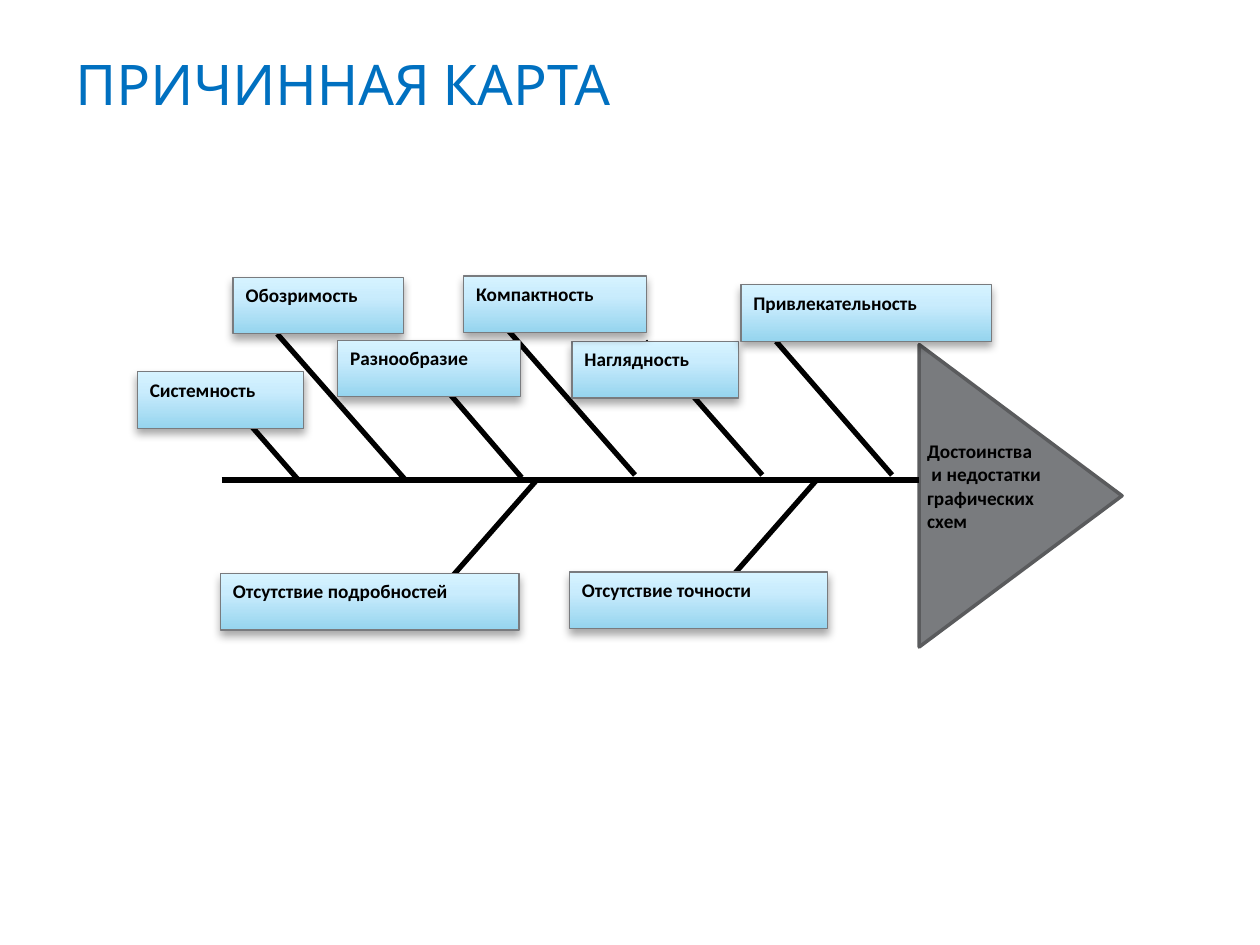
from copy import deepcopy

from lxml import etree
from pptx import Presentation
from pptx.dml.color import RGBColor
from pptx.enum.shapes import MSO_CONNECTOR, MSO_SHAPE
from pptx.enum.text import MSO_ANCHOR, PP_ALIGN
from pptx.oxml.ns import qn
from pptx.util import Emu, Pt

PX = 9144
RECT = MSO_SHAPE.RECTANGLE
TRIANGLE = MSO_SHAPE.ISOSCELES_TRIANGLE
STRAIGHT = MSO_CONNECTOR.STRAIGHT
LEFT = PP_ALIGN.LEFT
TOP = MSO_ANCHOR.TOP
MIDDLE = MSO_ANCHOR.MIDDLE

SPINE_Y = 381
BOX_HEIGHT = 45
BONES = [
    (616, 271, 708, 377),
    (512, 271, 605, 377),
    (404, 263, 504, 377),
    (322, 272, 414, 379),
    (426, SPINE_Y, 333, 487),
    (649, 380, 556, 486),
    (321, 380, 220, 265),
    (236, 380, 188, 325),
]
CAUSES = [
    ("Наглядность", 454, 271, 132),
    ("Компактность", 368, 219, 145),
    ("Обозримость", 185, 220, 135),
    ("Разнообразие", 268, 270, 145),
    ("Привлекательность", 588, 226, 199),
    ("Отсутствие точности", 452, 454, 205),
    ("Отсутствие подробностей", 175, 455, 237),
    ("Системность", 109, 295, 132),
]


def px(*values):
    return [Emu(v * PX) for v in values]


def rgb(value):
    return RGBColor.from_string(value)


class FishboneSlide:
    font = "Calibri"
    black = "000000"
    edge = "797B7E"
    gradient = [(0, "95D4EE"), (0.65, "C9ECFD"), (1, "D6F3FF")]

    def __init__(self, prs):
        self.slide = prs.slides.add_slide(prs.slide_layouts[6])

    def set_text(self, tf, text, size=11, font=font, color=black, bold=True, anchor=TOP, after=10):
        tf.word_wrap = True
        tf.vertical_anchor = anchor
        p = tf.paragraphs[0]
        p.text = text
        p.alignment = LEFT
        p.space_after = Pt(after)
        p.font.size = Pt(size)
        p.font.name = font
        p.font.bold = bold
        p.font.color.rgb = rgb(color)

    def text(self, text, x, y, w, h, **style):
        s = self.slide.shapes.add_textbox(*px(x, y, w, h))
        self.set_text(s.text_frame, text, **style)

    def shape(self, kind, x, y, w, h, line, width):
        s = self.slide.shapes.add_shape(kind, *px(x, y, w, h))
        s.shadow.inherit = False
        s.line.color.rgb = rgb(line)
        s.line.width = Pt(width)
        return s

    def head(self, x, y, w, h):
        s = self.shape(TRIANGLE, x, y, w, h, "5A5B5D", 2)
        s.rotation = 90
        s.fill.solid()
        s.fill.fore_color.rgb = rgb(self.edge)

    def line(self, x1, y1, x2, y2):
        s = self.slide.shapes.add_connector(STRAIGHT, *px(x1, y1, x2, y2))
        s.line.color.rgb = rgb(self.black)
        s.line.width = Pt(3)
        etree.SubElement(s._element.spPr, qn("a:effectLst"))

    def box(self, text, x, y, w):
        s = self.shape(RECT, x, y, w, BOX_HEIGHT, self.edge, 0.75)
        s.fill.gradient()
        s.fill.gradient_angle = 90
        stops = s._element.spPr.find(".//" + qn("a:gsLst"))
        stops.append(deepcopy(stops[0]))
        for stop, (position, color) in zip(s.fill.gradient_stops, self.gradient):
            stop.position = position
            stop.color.rgb = rgb(color)
        self.drop_shadow(s)
        self.set_text(s.text_frame, text)

    def drop_shadow(self, s):
        effects = s._element.spPr.find(qn("a:effectLst"))
        shadow = etree.SubElement(
            effects, qn("a:outerShdw"), blurRad=str(Pt(5)), dist=str(Pt(3)),
            dir="5400000", rotWithShape="0")
        color = etree.SubElement(shadow, qn("a:srgbClr"), val=self.black)
        etree.SubElement(color, qn("a:alpha"), val="35000")


def main():
    prs = Presentation()
    prs.slide_width, prs.slide_height = px(1000, 750)
    fishbone = FishboneSlide(prs)
    fishbone.text("ПРИЧИННАЯ КАРТА", 50, 30, 900, 72, size=32, font="Cabin",
                  color="0070C0", bold=False, anchor=MIDDLE, after=0)
    fishbone.head(690, 313, 240, 161)
    fishbone.text("Достоинства\n и недостатки\nграфических\nсхем", 726, 344, 149, 133)
    fishbone.line(176, SPINE_Y, 729, SPINE_Y)
    for bone in BONES:
        fishbone.line(*bone)
    for cause in CAUSES:
        fishbone.box(*cause)
    prs.save("out.pptx")


if __name__ == "__main__":
    main()
